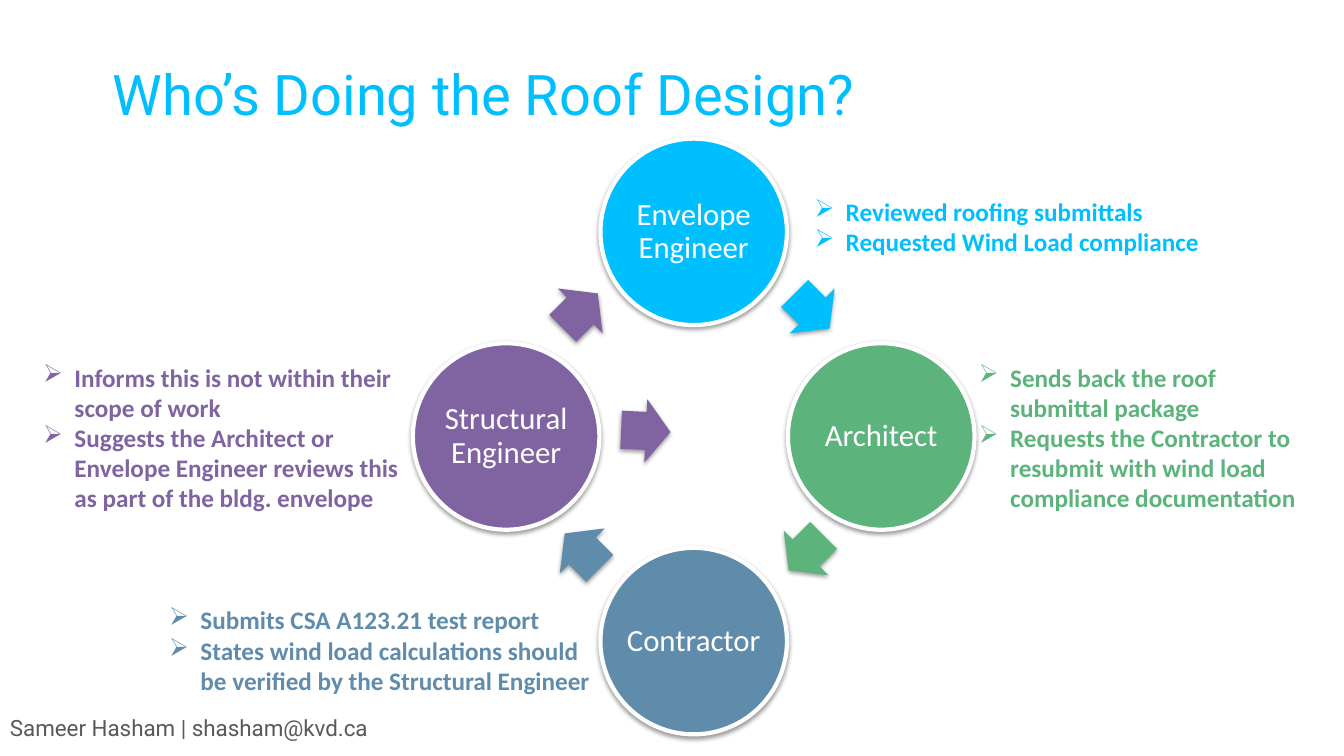
from lxml.etree import SubElement
from pptx import Presentation
from pptx.dml.color import RGBColor
from pptx.enum.shapes import MSO_SHAPE
from pptx.enum.text import MSO_ANCHOR, MSO_AUTO_SIZE, PP_ALIGN
from pptx.oxml.ns import qn
from pptx.util import Pt

PX = 9144
SKY = RGBColor(0x00, 0xBF, 0xFF)
GREEN = RGBColor(0x5C, 0xB3, 0x7C)
STEEL = RGBColor(0x60, 0x8C, 0xAB)
PURPLE = RGBColor(0x80, 0x64, 0xA2)
WHITE = RGBColor(0xFF, 0xFF, 0xFF)
GREY = RGBColor(0x59, 0x59, 0x59)

TITLE = "Who’s Doing the Roof Design?"
AUTHOR = "Sameer Hasham | shasham@kvd.ca"

ROLES = [
    ("Envelope Engineer", SKY, (0, -1), (754, 190, 474, 71),
     ["Reviewed roofing submittals",
      "Requested Wind Load compliance"]),
    ("Architect", GREEN, (1, 0), (917, 354, 399, 162),
     ["Sends back the roof submittal package",
      "Requests the Contractor to resubmit with wind load compliance documentation"]),
    ("Contractor", STEEL, (0, 1), (114, 595, 483, 101),
     ["Submits CSA A123.21 test report",
      "States wind load calculations should be verified by the Structural Engineer"]),
    ("Structural Engineer", PURPLE, (-1, 0), (-11, 354, 421, 162),
     ["Informs this is not within their scope of work",
      "Suggests the Architect or Envelope Engineer reviews this as part of the bldg. envelope"]),
]

ARROWS = [
    (616, 396, 2.7, PURPLE),
    (781, 277, 45, SKY),
    (775, 517, 135, GREEN),
    (553, 515, 225, STEEL),
    (551, 277, 315, PURPLE),
]

CENTRE_X, CENTRE_Y = 688, 433
REACH_X, REACH_Y = 186, 203
DIAMETER = 185
ARROW_W, ARROW_H = 49, 63
NOTE_MARGIN, NOTE_HANG = 75, 31


def emu(*lengths):
    return [round(length * PX) for length in lengths]


def set_font(paragraph, name, size, colour, bold=False):
    for run in paragraph.runs:
        run.font.name = name
        run.font.size = Pt(size)
        run.font.color.rgb = colour
        run.font.bold = bold


def add_solid(slide, preset, box, colour):
    solid = slide.shapes.add_shape(preset, *emu(*box))
    solid.fill.solid()
    solid.fill.fore_color.rgb = colour
    solid.line.fill.background()
    return solid


def add_shadow(solid):
    solid.shadow.inherit = False
    effects = solid._element.spPr.find(qn("a:effectLst"))
    shadow = SubElement(effects, qn("a:outerShdw"), blurRad="40000", dist="20000",
                        dir="5400000", rotWithShape="0")
    black = SubElement(shadow, qn("a:srgbClr"), val="000000")
    SubElement(black, qn("a:alpha"), val="38000")


def add_text(slide, box, lines):
    text_box = slide.shapes.add_textbox(*emu(*box))
    frame = text_box.text_frame
    frame.word_wrap = True
    frame.text = "\n".join(lines)
    return frame


def add_role(slide, label, colour, direction):
    left = CENTRE_X + direction[0] * REACH_X - DIAMETER / 2
    top = CENTRE_Y + direction[1] * REACH_Y - DIAMETER / 2
    role = add_solid(slide, MSO_SHAPE.OVAL, (left, top, DIAMETER, DIAMETER), colour)
    role.line.color.rgb = WHITE
    role.line.width = Pt(3)
    add_shadow(role)
    frame = role.text_frame
    frame.margin_left = frame.margin_right = frame.margin_top = frame.margin_bottom = 2 * PX
    frame.vertical_anchor = MSO_ANCHOR.MIDDLE
    frame.word_wrap = " " in label
    frame.text = label
    paragraph = frame.paragraphs[0]
    paragraph.alignment = PP_ALIGN.CENTER
    paragraph.line_spacing = 0.9
    set_font(paragraph, "Calibri", 22, WHITE)


def add_notes(slide, box, notes, colour):
    frame = add_text(slide, box, notes)
    frame.auto_size = MSO_AUTO_SIZE.SHAPE_TO_FIT_TEXT
    for paragraph in frame.paragraphs:
        properties = paragraph._p.get_or_add_pPr()
        properties.set("marL", str(NOTE_MARGIN * PX))
        properties.set("indent", str(-NOTE_HANG * PX))
        SubElement(properties, qn("a:buChar"), char="➢")
        set_font(paragraph, "Calibri", 18, colour, bold=True)


def add_arrow(slide, left, top, rotation, colour):
    arrow = add_solid(slide, MSO_SHAPE.RIGHT_ARROW, (left, top, ARROW_W, ARROW_H), colour)
    arrow.adjustments[0] = 0.6
    arrow.adjustments[1] = 0.5
    arrow.rotation = rotation
    add_shadow(arrow)


def main():
    deck = Presentation()
    deck.slide_width, deck.slide_height = emu(1333, 750)
    slide = deck.slides.add_slide(deck.slide_layouts[6])

    title = add_text(slide, (102, 62, 1184, 150), [TITLE]).paragraphs[0]
    title.line_spacing = Pt(42)
    set_font(title, "Roboto", 40, SKY)

    for arrow in ARROWS:
        add_arrow(slide, *arrow)
    for label, colour, direction, box, notes in ROLES:
        add_role(slide, label, colour, direction)
        add_notes(slide, box, notes, colour)

    author = add_text(slide, (0, 704, 378, 37), [AUTHOR])
    author.auto_size = MSO_AUTO_SIZE.SHAPE_TO_FIT_TEXT
    set_font(author.paragraphs[0], "Roboto", 16, GREY)

    deck.save("out.pptx")


if __name__ == "__main__":
    main()
